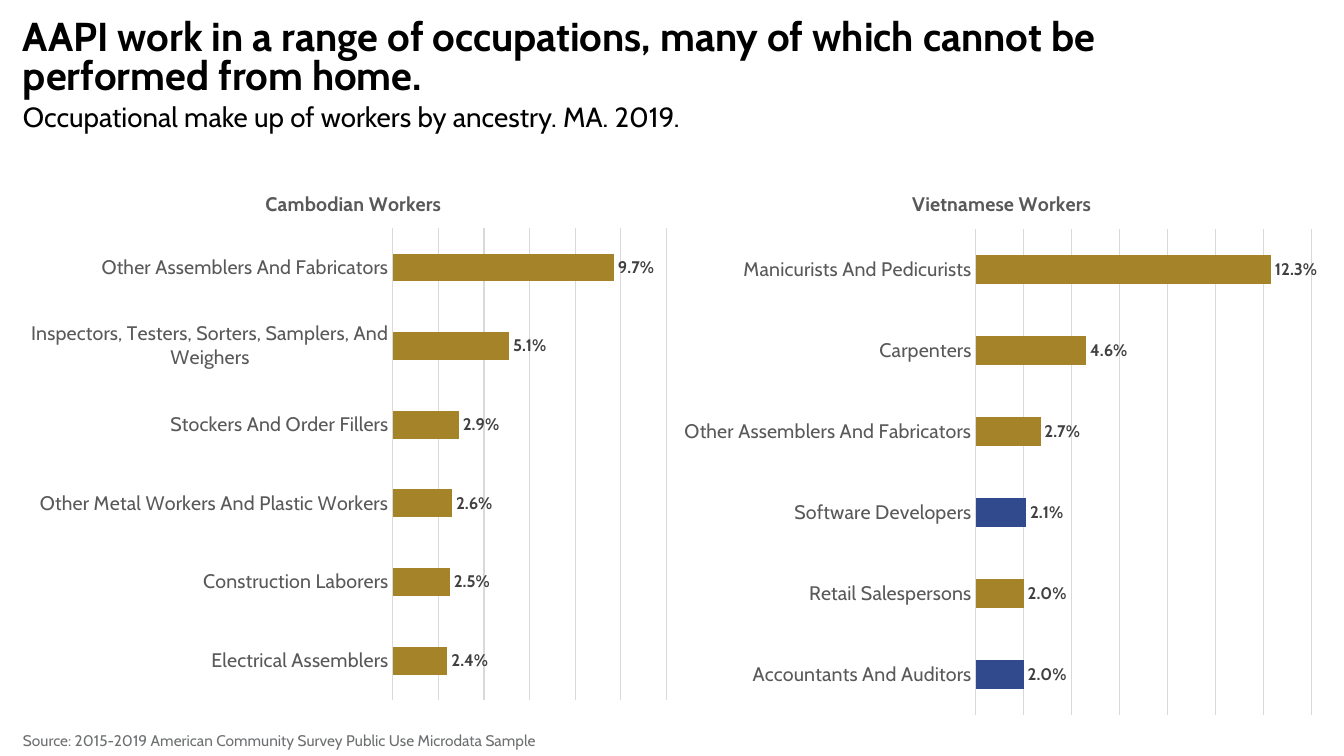
import pptx
import pptx.chart.data
import pptx.dml.color
import pptx.enum.chart
import pptx.enum.text
import pptx.oxml
import pptx.oxml.ns
import pptx.util
from pptx.util import Cm

FONT = "Cabin"
COLORS = {
    "black": "000000",
    "gold": "A58328",
    "blue": "314A8E",
    "axis": "595959",
    "grid": "D9D9D9",
    "value": "404040",
    "source": "6D6F71",
}


def rgb(name):
    return pptx.dml.color.RGBColor.from_string(COLORS[name])


def format_font(font, size, color, bold=False):
    font.name = FONT
    font.size = pptx.util.Pt(size)
    font.bold = bold
    font.color.rgb = rgb(color)


def write_text(paragraph, text, size=14, color="black", bold=False, line_spacing=None, space_before=None):
    run = paragraph.add_run()
    run.text = text
    format_font(run.font, size, color, bold)
    if line_spacing is not None:
        paragraph.line_spacing = line_spacing
    if space_before is not None:
        paragraph.space_before = pptx.util.Pt(space_before)


def add_text_frame(slide, box, anchor=pptx.enum.text.MSO_ANCHOR.TOP):
    frame = slide.shapes.add_textbox(*map(Cm, box)).text_frame
    frame.word_wrap = True
    frame.vertical_anchor = anchor
    return frame


def format_line(line):
    line.color.rgb = rgb("grid")
    line.width = pptx.util.Pt(0.75)


def place_in_chart(parent, index, chart_box, area, inner=False):
    chart_left, chart_top, chart_width, chart_height = chart_box
    fractions = {
        "x": (area[0] - chart_left) / chart_width,
        "y": (area[1] - chart_top) / chart_height,
    }
    if inner:
        fractions["w"] = area[2] / chart_width
        fractions["h"] = area[3] / chart_height
    target = '<c:layoutTarget val="inner"/>' if inner else ""
    modes = "".join(f'<c:{key}Mode val="edge"/>' for key in ("x", "y"))
    values = "".join(f'<c:{key} val="{value:.4f}"/>' for key, value in fractions.items())
    for layout in parent.findall(pptx.oxml.ns.qn("c:layout")):
        parent.remove(layout)
    parent.insert(index, pptx.oxml.parse_xml(
        f'<c:layout {pptx.oxml.ns.nsdecls("c")}><c:manualLayout>'
        f"{target}{modes}{values}</c:manualLayout></c:layout>"
    ))


def add_occupation_chart(slide, title, occupations, box, plot_box, title_position, maximum, blue_bars=()):
    data = pptx.chart.data.CategoryChartData(number_format="0.0%")
    data.categories = [name for name, share in occupations]
    data.add_series("Share of workers", [share for name, share in occupations])
    chart = slide.shapes.add_chart(
        pptx.enum.chart.XL_CHART_TYPE.BAR_CLUSTERED, *map(Cm, box), data
    ).chart
    format_font(chart.font, 10, "black")
    chart.has_legend = False

    chart.has_title = True
    write_text(chart.chart_title.text_frame.paragraphs[0], title, color="axis", bold=True)
    chart.chart_title.include_in_layout = False
    place_in_chart(chart.chart_title.element, 1, box, title_position)
    plot_area = chart.element.find(".//" + pptx.oxml.ns.qn("c:plotArea"))
    place_in_chart(plot_area, 0, box, plot_box, inner=True)

    category_axis = chart.category_axis
    category_axis.major_tick_mark = pptx.enum.chart.XL_TICK_MARK.NONE
    format_font(category_axis.tick_labels.font, 14, "axis")
    format_line(category_axis.format.line)

    value_axis = chart.value_axis
    value_axis.minimum_scale = 0
    value_axis.maximum_scale = maximum
    value_axis.major_unit = 0.02
    value_axis.has_major_gridlines = True
    format_line(value_axis.major_gridlines.format.line)
    value_axis.visible = False

    plot = chart.plots[0]
    plot.gap_width = 182
    plot.vary_by_categories = False
    series = plot.series[0]
    series.invert_if_negative = False
    series.format.fill.solid()
    series.format.fill.fore_color.rgb = rgb("gold")
    for index, (name, share) in enumerate(occupations):
        if name in blue_bars:
            fill = series.points[index].format.fill
            fill.solid()
            fill.fore_color.rgb = rgb("blue")

    labels = series.data_labels
    labels.show_value = True
    labels.position = pptx.enum.chart.XL_LABEL_POSITION.OUTSIDE_END
    labels.number_format = "0.0%"
    labels.number_format_is_linked = False
    format_font(labels.font, 12, "value", bold=True)


def main():
    presentation = pptx.Presentation()
    presentation.slide_width = Cm(33.87)
    presentation.slide_height = Cm(19.05)
    slide = presentation.slides.add_slide(presentation.slide_layouts[6])

    heading = add_text_frame(slide, (0.33, 0.15, 31.57, 3.33), pptx.enum.text.MSO_ANCHOR.BOTTOM)
    write_text(
        heading.paragraphs[0],
        "AAPI work in a range of occupations, many of which cannot be performed from home.",
        size=28.8, bold=True, line_spacing=0.8, space_before=6,
    )
    write_text(
        heading.add_paragraph(),
        "Occupational make up of workers by ancestry. MA. 2019.",
        size=19.8, line_spacing=0.8, space_before=6,
    )

    add_occupation_chart(
        slide,
        "Vietnamese Workers",
        [
            ("Accountants And Auditors", 0.02),
            ("Retail Salespersons", 0.02),
            ("Software Developers", 0.021),
            ("Other Assemblers And Fabricators", 0.027),
            ("Carpenters", 0.046),
            ("Manicurists And Pedicurists", 0.123),
        ],
        box=(16.94, 4.14, 16.46, 14.17),
        plot_box=(24.59, 5.78, 8.47, 12.25),
        title_position=(22.9, 4.7),
        maximum=0.14,
        blue_bars=("Accountants And Auditors", "Software Developers"),
    )
    add_occupation_chart(
        slide,
        "Cambodian Workers",
        [
            ("Electrical Assemblers", 0.024),
            ("Construction Laborers", 0.025),
            ("Other Metal Workers And Plastic Workers", 0.026),
            ("Stockers And Order Fillers", 0.029),
            ("Inspectors, Testers, Sorters, Samplers, And Weighers", 0.051),
            ("Other Assemblers And Fabricators", 0.097),
        ],
        box=(0.48, 4.14, 16.69, 13.77),
        plot_box=(9.9, 5.75, 6.9, 11.89),
        title_position=(6.6, 4.7),
        maximum=0.12,
    )

    source = add_text_frame(slide, (0.33, 18.31, 16.81, 0.74))
    write_text(
        source.paragraphs[0],
        "Source: 2015-2019 American Community Survey Public Use Microdata Sample",
        size=11, color="source",
    )
    presentation.save("out.pptx")


if __name__ == "__main__":
    main()
